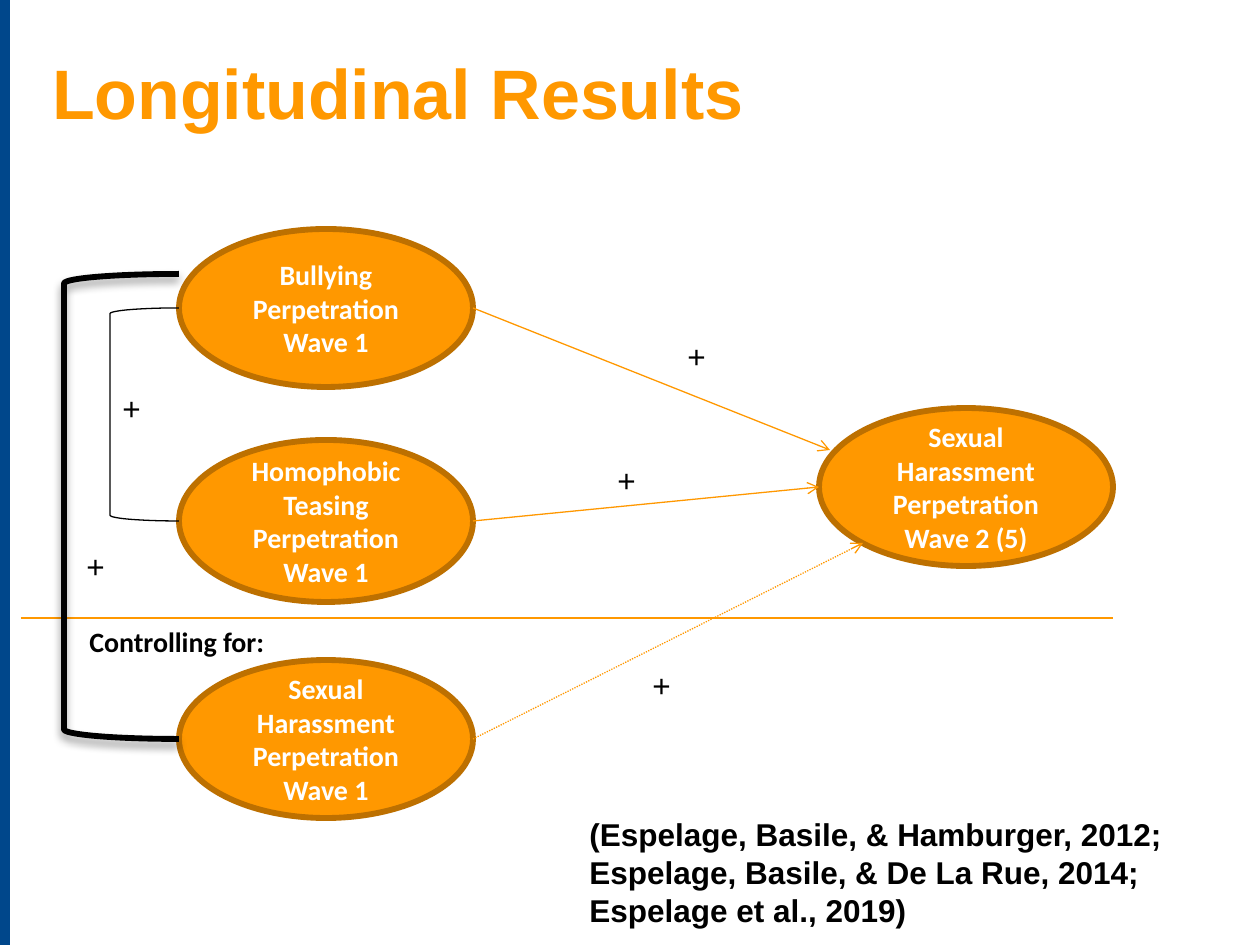
import pptx
import pptx.dml.color
import pptx.enum.dml
import pptx.enum.shapes
import pptx.enum.text
import pptx.oxml
import pptx.oxml.ns
import pptx.util

ORANGE = pptx.dml.color.RGBColor(0xFF, 0x98, 0x00)
BROWN = pptx.dml.color.RGBColor(0xBD, 0x70, 0x00)
BLUE = pptx.dml.color.RGBColor(0x00, 0x47, 0x8B)
BLACK = pptx.dml.color.RGBColor(0, 0, 0)
WHITE = pptx.dml.color.RGBColor(255, 255, 255)

SHAPE = pptx.enum.shapes.MSO_SHAPE
ANCHOR = pptx.enum.text.MSO_ANCHOR
ALIGN = pptx.enum.text.PP_ALIGN
DASH = pptx.enum.dml.MSO_LINE
NAMESPACE = pptx.oxml.ns.nsdecls("a")


def px(*lengths):
    return [pptx.util.Emu(round(length * 914400 / 126)) for length in lengths]


def write(frame, lines, font, size, color, bold=False, align=ALIGN.LEFT):
    for index, line in enumerate(lines):
        para = frame.paragraphs[0] if index == 0 else frame.add_paragraph()
        para.text = line
        para.alignment = align
        para.font.name = font
        para.font.size = pptx.util.Pt(size)
        para.font.bold = bold
        para.font.color.rgb = color


deck = pptx.Presentation()
deck.slide_width, deck.slide_height = px(1260, 945)
page = deck.slides.add_slide(deck.slide_layouts[5])

stripe = page.shapes.add_shape(SHAPE.RECTANGLE, *px(0, 0, 10, 945))
stripe.shadow.inherit = False
stripe.fill.solid()
stripe.fill.fore_color.rgb = BLUE
stripe.line.fill.background()

title = page.shapes.title
title.left, title.top, title.width, title.height = px(42, 42, 1081, 94)
title.text_frame.vertical_anchor = ANCHOR.BOTTOM
title.text_frame.margin_left, title.text_frame.margin_bottom = px(10, 2)
write(title.text_frame, ["Longitudinal Results"], "Arial", 40, ORANGE, True)

ovals = [
    (179, 229, 158, "Bullying", "Wave 1"),
    (179, 440, 162, "Homophobic Teasing", "Wave 1"),
    (179, 660, 158, "Sexual Harassment", "Wave 1"),
    (819, 408, 158, "Sexual Harassment", "Wave 2 (5)"),
]
for left, top, height, behavior, wave in ovals:
    oval = page.shapes.add_shape(SHAPE.OVAL, *px(left, top, 294, height))
    oval.shadow.inherit = False
    oval.fill.solid()
    oval.fill.fore_color.rgb = ORANGE
    oval.line.color.rgb = BROWN
    oval.line.width = pptx.util.Pt(3.35)
    oval.text_frame.word_wrap = True
    oval.text_frame.vertical_anchor = ANCHOR.MIDDLE
    write(oval.text_frame, [behavior, "Perpetration", wave], "Calibri", 16, WHITE, True, ALIGN.CENTER)

lines = [
    (473, 308, 830, 450, True, None),
    (473, 521, 819, 487, True, None),
    (473, 739, 863, 543, True, DASH.ROUND_DOT),
    (21, 618, 1113, 618, False, None),
]
for start_x, start_y, end_x, end_y, arrow, dash in lines:
    line = page.shapes.add_connector(
        pptx.enum.shapes.MSO_CONNECTOR.STRAIGHT, *px(start_x, start_y, end_x, end_y))
    line.line.color.rgb = ORANGE
    line.line.width = pptx.util.Pt(0.75)
    if dash:
        line.line.dash_style = dash
    if arrow:
        line.line._get_or_add_ln().append(
            pptx.oxml.parse_xml(f'<a:tailEnd {NAMESPACE} type="arrow"/>'))
    line._element.spPr.append(pptx.oxml.parse_xml(f"<a:effectLst {NAMESPACE}/>"))

brackets = [(110, 308, 69, 213, 0.75, False), (64, 274, 115, 465, 3.35, True)]
for left, top, width, height, weight, shaded in brackets:
    bracket = page.shapes.add_shape(SHAPE.LEFT_BRACKET, *px(left, top, width, height))
    bracket.shadow.inherit = False
    bracket.fill.background()
    bracket.line.color.rgb = BLACK
    bracket.line.width = pptx.util.Pt(weight)
    if shaded:
        effects = bracket._element.spPr.find(pptx.oxml.ns.qn("a:effectLst"))
        effects.append(pptx.oxml.parse_xml(
            f'<a:outerShdw {NAMESPACE} blurRad="66040" dist="38100" dir="5400000" rotWithShape="0">'
            '<a:srgbClr val="000000"><a:alpha val="40000"/></a:srgbClr></a:outerShdw>'))

citation = ("(Espelage, Basile, & Hamburger, 2012; Espelage, Basile, & De La Rue, 2014; "
            "Espelage et al., 2019)")
labels = [
    (77, 618, 203, 47, "Controlling for:", "Calibri", 16, True, False),
    (577, 809, 640, 127, citation, "Arial", 18, True, True),
]
for left, top in [(110, 383), (605, 455), (675, 331), (74, 541), (640, 660)]:
    labels.append((left, top, 69, 50, "+", "Arial", 18, False, True))
for left, top, width, height, text, font, size, bold, wrap in labels:
    label = page.shapes.add_textbox(*px(left, top, width, height))
    label.text_frame.word_wrap = wrap
    write(label.text_frame, [text], font, size, BLACK, bold)

deck.save("out.pptx")
